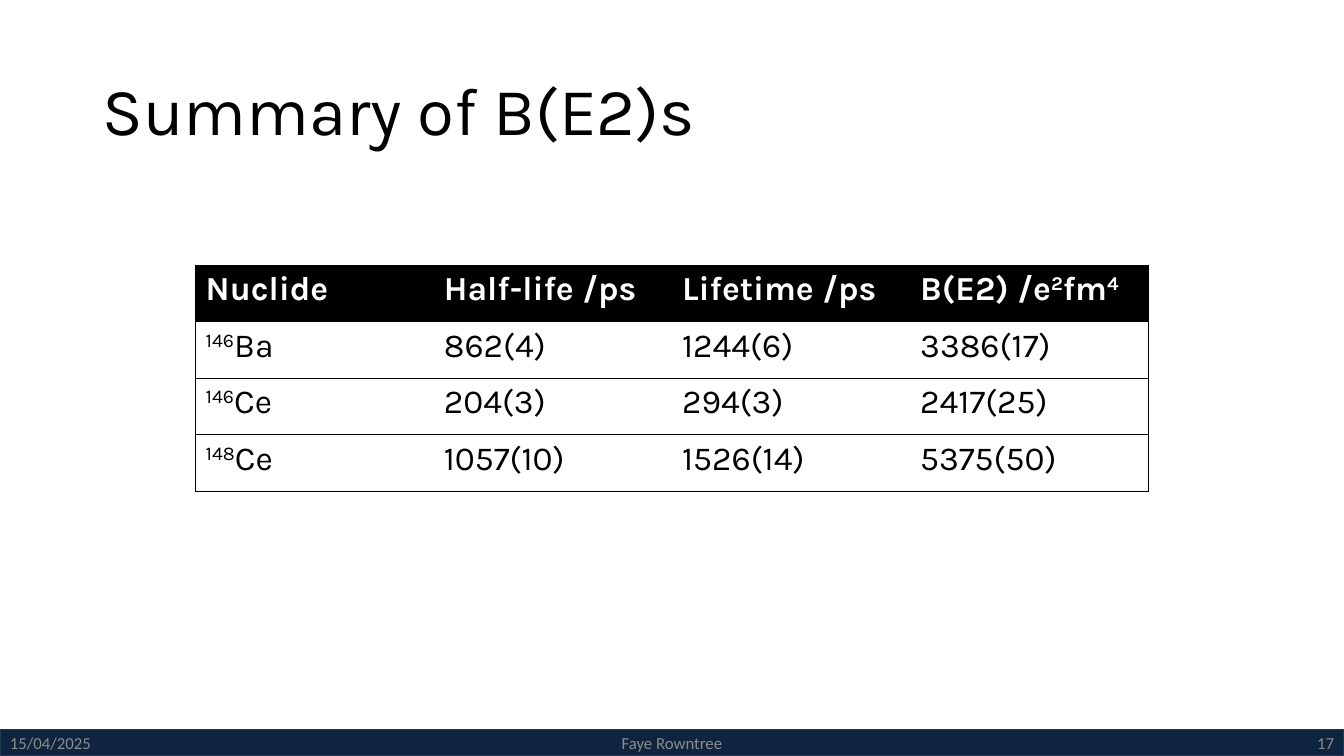
from lxml import etree
from pptx import Presentation
from pptx.dml.color import RGBColor
from pptx.enum.shapes import MSO_SHAPE
from pptx.enum.text import MSO_ANCHOR, PP_ALIGN
from pptx.oxml.ns import qn
from pptx.util import Inches, Pt

RECTANGLE = MSO_SHAPE.RECTANGLE
MIDDLE = MSO_ANCHOR.MIDDLE
LEFT, CENTER, RIGHT = PP_ALIGN.LEFT, PP_ALIGN.CENTER, PP_ALIGN.RIGHT
WIDTH, HEIGHT = 13.33, 7.5
BLACK, WHITE = "000000", "FFFFFF"


def color(value):
    return RGBColor.from_string(value)


def write(para, text, font, size, tint, bold=False):
    """Add the text run by run; parts between bars are superscript."""
    for index, part in enumerate(text.split("|")):
        if not part:
            continue
        span = para.add_run()
        span.text = part
        span.font.name = font
        span.font.size = Pt(size)
        span.font.bold = bold
        span.font.color.rgb = color(tint)
        if index % 2:
            span._r.get_or_add_rPr().set("baseline", "30000")


deck = Presentation()
deck.slide_width, deck.slide_height = Inches(WIDTH), Inches(HEIGHT)
page = deck.slides.add_slide(deck.slide_layouts[6])

# Footer band
band_height = 0.26
band = page.shapes.add_shape(RECTANGLE, 0, Inches(HEIGHT - band_height),
                             Inches(WIDTH), Inches(band_height))
band.shadow.inherit = False
band.fill.solid()
band.fill.fore_color.rgb = color("0F243E")
band.line.color.rgb = color("233953")
band.line.width = Pt(1)

# Title and footer texts
footer_top, footer_height = 7.17, 0.4
texts = [
    ("Summary of B(E2)s", 0.92, 0.4, 11.5, 1.45, LEFT, "Karla", 48, BLACK),
    ("15/04/2025", 0, footer_top, 3, footer_height, LEFT, "Calibri", 12, "8C8C8C"),
    ("Faye Rowntree", (WIDTH - 4.5) / 2, footer_top, 4.5, footer_height,
     CENTER, "Calibri", 12, "8C8C8C"),
    ("17", WIDTH - 3, footer_top, 3, footer_height, RIGHT, "Calibri", 12, "8C8C8C"),
]
for text, left, top, width, height, align, font, size, tint in texts:
    box = page.shapes.add_textbox(Inches(left), Inches(top), Inches(width), Inches(height))
    frame = box.text_frame
    frame.word_wrap = True
    frame.vertical_anchor = MIDDLE
    para = frame.paragraphs[0]
    para.alignment = align
    if font == "Karla":
        para.line_spacing = 0.9
    write(para, text, font, size, tint)

# Table of results
results = [
    ["Nuclide", "Half-life /ps", "Lifetime /ps", "B(E2) /e|2|fm|4|"],
    ["|146|Ba", "862(4)", "1244(6)", "3386(17)"],
    ["|146|Ce", "204(3)", "294(3)", "2417(25)"],
    ["|148|Ce", "1057(10)", "1526(14)", "5375(50)"],
]
row_count, column_count = len(results), len(results[0])
table_width, table_height = 9.45, 2.24
table = page.shapes.add_table(
    row_count, column_count, Inches((WIDTH - table_width) / 2), Inches(2.63),
    Inches(table_width), Inches(table_height)).table
table.horz_banding = False

for row, values in enumerate(results):
    for column, value in enumerate(values):
        is_header = row == 0
        cell = table.cell(row, column)
        cell.fill.solid()
        cell.fill.fore_color.rgb = color(BLACK if is_header else WHITE)
        write(cell.text_frame.paragraphs[0], value, "Karla", 24,
              WHITE if is_header else BLACK, is_header)

        # Horizontal rules everywhere, vertical ones only on the outer sides
        sides = [("a:lnL", column == 0), ("a:lnR", column == column_count - 1),
                 ("a:lnT", True), ("a:lnB", True)]
        properties = cell._tc.get_or_add_tcPr()
        for place, (side, is_drawn) in enumerate(sides):
            line = etree.Element(qn(side), w=str(Pt(0.5)))
            properties.insert(place, line)
            if is_drawn:
                fill = etree.SubElement(line, qn("a:solidFill"))
                etree.SubElement(fill, qn("a:srgbClr"), val=BLACK)
            else:
                etree.SubElement(line, qn("a:noFill"))

deck.save("out.pptx")
